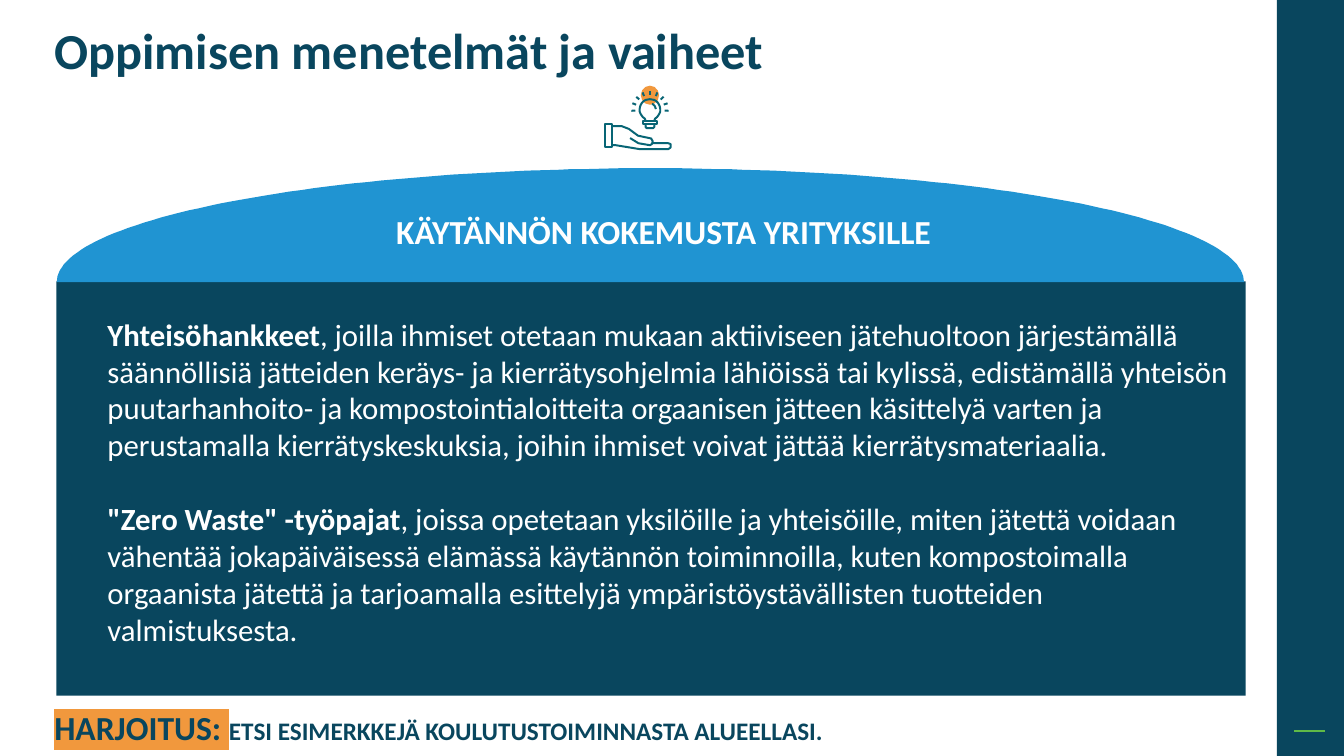
from dataclasses import dataclass
from math import cos, radians, sin

from lxml import etree
from pptx import Presentation
from pptx.dml.color import RGBColor
from pptx.enum.shapes import MSO_CONNECTOR, MSO_SHAPE
from pptx.enum.text import MSO_ANCHOR, PP_ALIGN
from pptx.oxml.ns import qn
from pptx.shapes.autoshape import Shape
from pptx.shapes.shapetree import GroupShapes, SlideShapes
from pptx.util import Cm, Pt

RECT, OVAL = MSO_SHAPE.RECTANGLE, MSO_SHAPE.OVAL
STRAIGHT = MSO_CONNECTOR.STRAIGHT
TOP, MIDDLE = MSO_ANCHOR.TOP, MSO_ANCHOR.MIDDLE
LEFT, CENTER = PP_ALIGN.LEFT, PP_ALIGN.CENTER

Shapes = SlideShapes | GroupShapes
Points = list[tuple[float, float]]


@dataclass(frozen=True)
class Theme:
    font: str = "Calibri"
    navy: str = "09465E"
    blue: str = "2094D2"
    teal: str = "086575"
    orange: str = "F1983D"
    green: str = "60BA47"
    white: str = "FFFFFF"
    title: int = 36
    heading: int = 24
    body: int = 22
    task: int = 18


THEME = Theme()


@dataclass(frozen=True)
class Box:
    x: float
    y: float
    w: float
    h: float


@dataclass(frozen=True)
class Span:
    text: str
    size: int
    color: str
    bold: bool = True
    highlight: str = ""


@dataclass(frozen=True)
class TextBlock:
    box: Box
    paragraphs: list[list[Span]]
    align: PP_ALIGN = LEFT
    anchor: MSO_ANCHOR = TOP
    line_spacing: float = 1.0
    gap: float = 0


def body_paragraph(lead: str, rest: str) -> list[Span]:
    return [Span(lead, THEME.body, THEME.white),
            Span(rest, THEME.body, THEME.white, bold=False)]


TEXTS = [
    TextBlock(Box(1.12, 0.61, 22.2, 1.47),
              [[Span("Oppimisen menetelmät ja vaiheet", THEME.title, THEME.navy)]],
              anchor=MIDDLE, line_spacing=0.9),
    TextBlock(Box(5.08, 5.18, 23.29, 1.27),
              [[Span("KÄYTÄNNÖN KOKEMUSTA YRITYKSILLE", THEME.heading, THEME.white)]],
              align=CENTER),
    TextBlock(Box(2.46, 7.82, 28.88, 9.4), [
        body_paragraph(
            "Yhteisöhankkeet",
            ", joilla ihmiset otetaan mukaan aktiiviseen jätehuoltoon järjestämällä "
            "säännöllisiä jätteiden keräys- ja kierrätysohjelmia lähiöissä tai kylissä, "
            "edistämällä yhteisön puutarhanhoito- ja kompostointialoitteita orgaanisen "
            "jätteen käsittelyä varten ja perustamalla kierrätyskeskuksia, joihin ihmiset "
            "voivat jättää kierrätysmateriaalia."),
        body_paragraph(
            '"Zero Waste" -työpajat',
            ", joissa opetetaan yksilöille ja yhteisöille, miten jätettä voidaan vähentää "
            "jokapäiväisessä elämässä käytännön toiminnoilla, kuten kompostoimalla "
            "orgaanista jätettä ja tarjoamalla esittelyjä ympäristöystävällisten "
            "tuotteiden valmistuksesta."),
    ], gap=26.4),
    TextBlock(Box(1.12, 17.7, 29.57, 1.27), [[
        Span("HARJOITUS: ", THEME.heading, THEME.navy, highlight=THEME.orange),
        Span("ETSI ESIMERKKEJÄ KOULUTUSTOIMINNASTA ALUEELLASI.", THEME.task, THEME.navy),
    ]]),
]

BULB_X, BULB_Y = 16.38, 2.76
CUFF: Points = [(15.24, 3.12), (15.42, 3.12), (15.42, 3.71), (15.24, 3.71), (15.24, 3.12)]
FINGERS: Points = [(15.42, 3.18), (15.67, 3.18), (15.85, 3.25), (16.08, 3.42), (16.41, 3.49),
                   (16.45, 3.56), (16.43, 3.63), (16.38, 3.66), (16.09, 3.61), (15.88, 3.48)]
PALM: Points = [(15.42, 3.66), (15.52, 3.66), (16.13, 3.76), (16.84, 3.76), (16.9, 3.72),
                (16.9, 3.63), (16.84, 3.61), (16.45, 3.61)]
COLLAR: Points = [(16.2, 3.04), (16.56, 3.04), (16.56, 3.12), (16.2, 3.12), (16.2, 3.04)]
CAP: Points = [(16.27, 3.12), (16.27, 3.2), (16.3, 3.23), (16.46, 3.23), (16.49, 3.2),
               (16.49, 3.12)]


def arc(cx: float, cy: float, rx: float, ry: float, start: float, end: float,
        steps: int) -> Points:
    angles = [radians(start + (end - start) * i / steps) for i in range(steps + 1)]
    return [(cx + rx * cos(a), cy + ry * sin(a)) for a in angles]


def paint(sp: Shape, color: str) -> None:
    sp.shadow.inherit = False
    sp.fill.solid()
    sp.fill.fore_color.rgb = RGBColor.from_string(color)
    sp.line.fill.background()


def add_preset(shapes: Shapes, kind: MSO_SHAPE, box: Box, color: str) -> None:
    paint(shapes.add_shape(kind, Cm(box.x), Cm(box.y), Cm(box.w), Cm(box.h)), color)


def add_outline(shapes: Shapes, points: Points, close: bool) -> Shape:
    units = [(round(x * 100), round(y * 100)) for x, y in points]
    builder = shapes.build_freeform(*units[0], scale=Cm(0.01))
    builder.add_line_segments(units[1:], close=close)
    return builder.convert_to_shape()


def add_stroke(shapes: Shapes, points: Points) -> None:
    sp = add_outline(shapes, points, close=False)
    sp.shadow.inherit = False
    sp.fill.background()
    sp.line.color.rgb = RGBColor.from_string(THEME.teal)
    sp.line.width = Cm(0.05)


def add_line(shapes: Shapes, points: Points, color: str, width: int) -> None:
    (x1, y1), (x2, y2) = points
    line = shapes.add_connector(STRAIGHT, Cm(x1), Cm(y1), Cm(x2), Cm(y2))
    line.line.color.rgb = RGBColor.from_string(color)
    line.line.width = width
    etree.SubElement(line._element.spPr, qn("a:effectLst"))


def add_text(shapes: Shapes, block: TextBlock) -> None:
    box = block.box
    tf = shapes.add_textbox(Cm(box.x), Cm(box.y), Cm(box.w), Cm(box.h)).text_frame
    tf.word_wrap = True
    tf.vertical_anchor = block.anchor
    for i, spans in enumerate(block.paragraphs):
        p = tf.add_paragraph() if i else tf.paragraphs[0]
        p.alignment = block.align
        p.line_spacing = block.line_spacing
        if i:
            p.space_before = Pt(block.gap)
        for span in spans:
            r = p.add_run()
            r.text = span.text
            r.font.size = Pt(span.size)
            r.font.bold = span.bold
            r.font.color.rgb = RGBColor.from_string(span.color)
            r.font.name = THEME.font
            if span.highlight:
                mark = etree.Element(qn("a:highlight"))
                etree.SubElement(mark, qn("a:srgbClr"), val=span.highlight)
                r.font._element.find(qn("a:latin")).addprevious(mark)


def add_idea_icon(shapes: SlideShapes) -> None:
    icon = shapes.add_group_shape().shapes
    add_preset(icon, OVAL, Box(16.15, 2.16, 0.46, 0.48), THEME.orange)
    glass = arc(BULB_X, BULB_Y, 0.26, 0.26, 120, 420, 24)
    glint = arc(BULB_X, BULB_Y, 0.15, 0.15, -70, -5, 6)
    neck: Points = [(16.49, 3.04)]
    for points in ([(16.27, 3.04)] + glass + neck, glint, COLLAR, CAP, CUFF, FINGERS, PALM):
        add_stroke(icon, points)
    inner = arc(BULB_X, BULB_Y, 0.37, 0.37, -184, 4, 8)
    outer = arc(BULB_X, BULB_Y, 0.47, 0.47, -184, 4, 8)
    for ray in zip(inner, outer):
        add_line(icon, list(ray), THEME.teal, Cm(0.05))


def main() -> None:
    prs = Presentation()
    prs.slide_width, prs.slide_height = Cm(33.87), Cm(19.05)
    s = prs.slides.add_slide(prs.slide_layouts[6])
    add_preset(s.shapes, RECT, Box(32.18, 0, 1.69, 19.05), THEME.navy)
    add_line(s.shapes, [(32.61, 18.42), (33.4, 18.42)], THEME.green, Pt(1))
    add_preset(s.shapes, RECT, Box(1.42, 7.09, 29.97, 10.44), THEME.navy)
    dome = arc(16.39, 7.11, 14.96, 2.87, 180, 360, 120)
    paint(add_outline(s.shapes, dome, close=True), THEME.blue)
    add_idea_icon(s.shapes)
    for block in TEXTS:
        add_text(s.shapes, block)
    prs.save("out.pptx")


if __name__ == "__main__":
    main()
